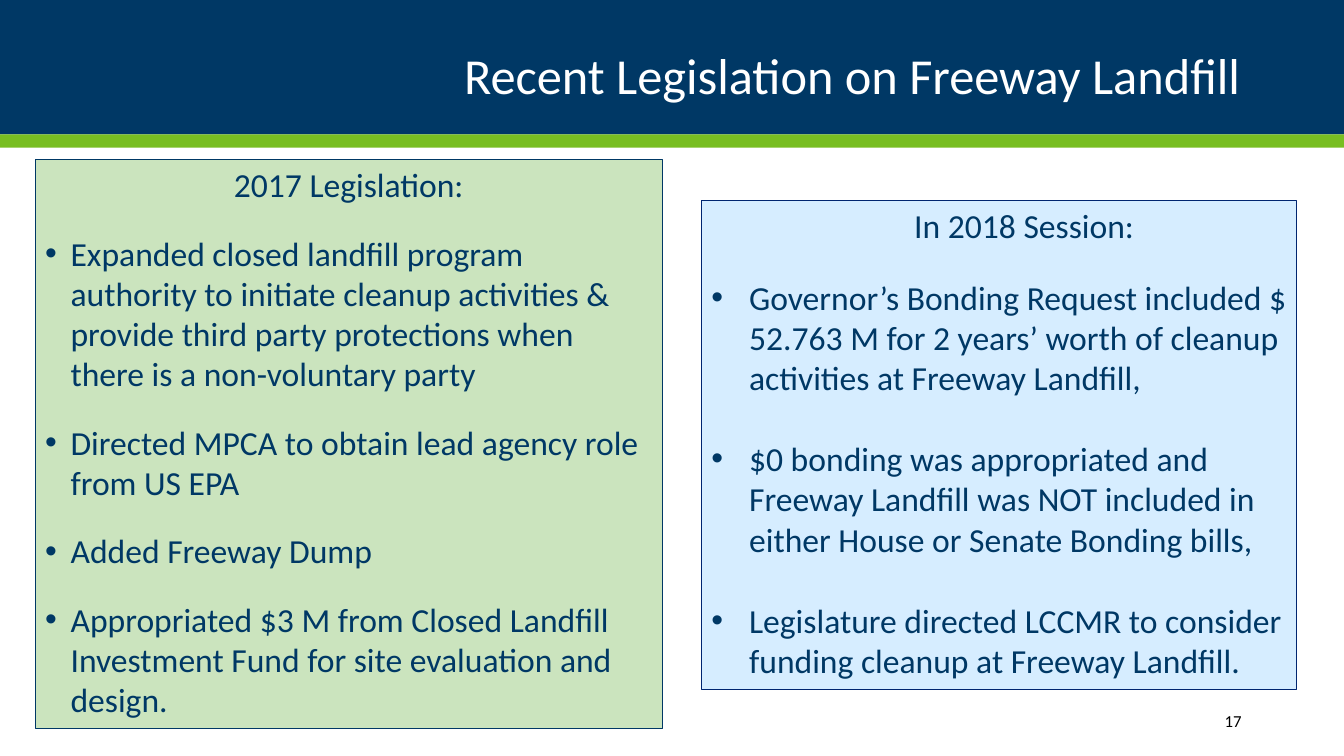
from dataclasses import dataclass
from lxml.etree import SubElement
from pptx import Presentation
from pptx.dml.color import RGBColor
from pptx.enum.shapes import MSO_SHAPE as Kind
from pptx.enum.text import MSO_ANCHOR as Anchor, PP_ALIGN as Align
from pptx.oxml.ns import qn
from pptx.util import Cm, Pt

NAVY, LIME, WHITE, BLACK = "003865", "78BE21", "FFFFFF", "000000"
WIDTH, HEIGHT = 33.87, 19.05


@dataclass
class Box:
    left: float
    top: float
    width: float
    height: float


@dataclass
class Panel:
    box: Box
    fill: str
    line: str
    head: str
    shift: float
    indent: float
    first: float
    gap: float
    items: list[str]


BANDS = [(Box(0, 0, WIDTH, 3.39), NAVY), (Box(0, 3.39, WIDTH, 0.33), LIME)]

PANELS = [
    Panel(Box(0.89, 4.01, 15.8, 14.35), "CBE4BE", NAVY,
          "2017 Legislation:", 0, 0.64, 20, 20, [
              "Expanded closed landfill program authority to initiate cleanup "
              "activities & provide third party protections when there is a "
              "non-voluntary party",
              "Directed MPCA to obtain lead agency role from US EPA",
              "Added Freeway Dump",
              "Appropriated $3 M from Closed Landfill Investment Fund for "
              "site evaluation and design."]),
    Panel(Box(17.68, 5.05, 14.99, 12.32), "D6EDFF", "002570",
          "In 2018 Session:", 1.27, 0.95, 22, 29, [
              "Governor’s Bonding Request included $ 52.763 M for 2 years’ "
              "worth of cleanup activities at Freeway Landfill,",
              "$0 bonding was appropriated and Freeway Landfill was NOT "
              "included in either House or Senate Bonding bills,",
              "Legislature directed LCCMR to consider funding cleanup at "
              "Freeway Landfill."]),
]


def color(code: str) -> RGBColor:
    return RGBColor.from_string(code)


def place(shape, box: Box) -> None:
    shape.left, shape.top = Cm(box.left), Cm(box.top)
    shape.width, shape.height = Cm(box.width), Cm(box.height)


def style(para, size: float, code: str, align: Align) -> None:
    para.alignment = align
    para.font.name = "Calibri"
    para.font.size = Pt(size)
    para.font.color.rgb = color(code)


def bullet(para, indent: float) -> None:
    props = para._p.get_or_add_pPr()
    props.set("marL", str(Cm(indent)))
    props.set("indent", str(-Cm(indent)))
    SubElement(props, qn("a:buFont"), typeface="Arial")
    SubElement(props, qn("a:buChar"), char="•")


def rect(slide, box: Box, fill: str):
    shape = slide.shapes.add_shape(Kind.RECTANGLE, 0, 0, 0, 0)
    place(shape, box)
    shape.shadow.inherit = False
    shape.fill.solid()
    shape.fill.fore_color.rgb = color(fill)
    shape.line.fill.background()
    return shape


def panel(slide, data: Panel) -> None:
    shape = rect(slide, data.box, data.fill)
    shape.line.color.rgb = color(data.line)
    shape.line.width = Pt(0.75)
    frame = shape.text_frame
    frame.word_wrap = True
    frame.vertical_anchor = Anchor.TOP
    head = frame.paragraphs[0]
    head.text = data.head
    head._p.get_or_add_pPr().set("marL", str(Cm(data.shift)))
    style(head, 24, NAVY, Align.CENTER)
    for num, item in enumerate(data.items):
        para = frame.add_paragraph()
        para.text = item
        bullet(para, data.indent)
        para.space_before = Pt(data.gap if num else data.first)
        style(para, 24, NAVY, Align.LEFT)


def main() -> None:
    deck = Presentation()
    deck.slide_width, deck.slide_height = Cm(WIDTH), Cm(HEIGHT)
    slide = deck.slides.add_slide(deck.slide_layouts[5])

    title = slide.shapes.title
    for box, fill in BANDS:
        title.element.addprevious(rect(slide, box, fill).element)
    place(title, Box(1.7, 0.64, 29.82, 2.64))
    title.text_frame.text = "Recent Legislation on Freeway Landfill"
    title.text_frame.vertical_anchor = Anchor.MIDDLE
    para = title.text_frame.paragraphs[0]
    para.line_spacing = 0.9
    style(para, 36, WHITE, Align.RIGHT)

    for data in PANELS:
        panel(slide, data)

    page = slide.shapes.add_textbox(0, 0, 0, 0)
    place(page, Box(27.48, 17.65, 4.06, 1.02))
    page.text_frame.word_wrap = True
    page.text_frame.vertical_anchor = Anchor.MIDDLE
    page.text_frame.text = "17"
    style(page.text_frame.paragraphs[0], 12, BLACK, Align.RIGHT)

    deck.save("out.pptx")


if __name__ == "__main__":
    main()
